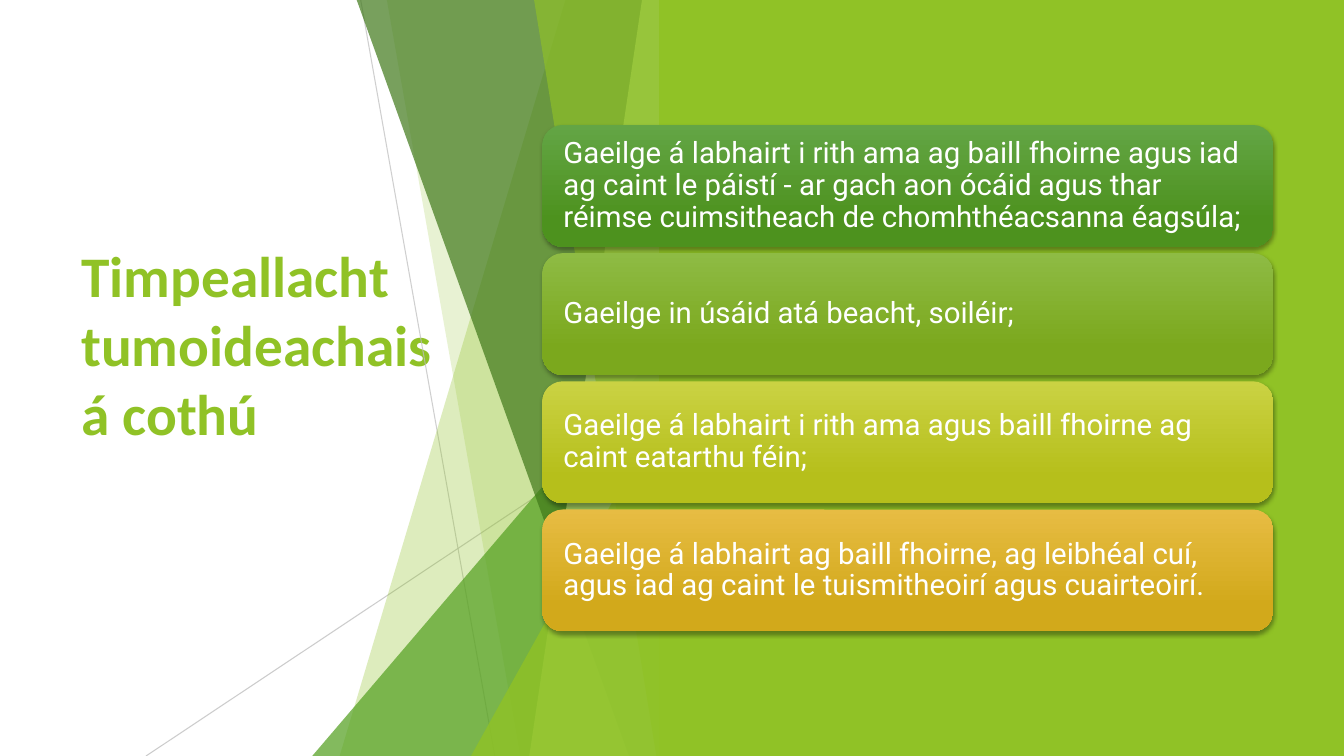
from lxml import etree
from pptx import Presentation
from pptx.dml.color import RGBColor
from pptx.enum.shapes import MSO_CONNECTOR, MSO_SHAPE
from pptx.enum.text import MSO_ANCHOR, PP_ALIGN
from pptx.oxml.ns import qn
from pptx.util import Cm, Pt

STRAIGHT = MSO_CONNECTOR.STRAIGHT
RECTANGLE = MSO_SHAPE.RECTANGLE
ROUNDED = MSO_SHAPE.ROUNDED_RECTANGLE
TRIANGLE = MSO_SHAPE.ISOSCELES_TRIANGLE
MIDDLE = MSO_ANCHOR.MIDDLE
LEFT = PP_ALIGN.LEFT

COLORS = {
    "white": "FFFFFF",
    "gray": "BFBFBF",
    "lime": "90C226",
    "green": "54A021",
    "dark": "3F7819",
    "pale": "C0E474",
}
SLIDE_WIDTH, SLIDE_HEIGHT = 33.87, 19.05
FACET_RIGHT = 16.92
CARD_LEFT, CARD_TOP, CARD_WIDTH, CARD_HEIGHT = 13.67, 3.15, 18.42, 3.07
CARD_PITCH = 3.23

TITLE = "Timpeallacht tumoideachais á cothú"
CARDS = [
    ("Gaeilge á labhairt i rith ama ag baill fhoirne agus iad ag caint le páistí "
     "- ar gach aon ócáid agus thar réimse cuimsitheach de chomhthéacsanna éagsúla;",
     "63A545", "4D921E"),
    ("Gaeilge in úsáid atá beacht, soiléir;", "8EBB44", "7BA81D"),
    ("Gaeilge á labhairt i rith ama agus baill fhoirne ag caint eatarthu féin;",
     "CAD243", "B6BF1B"),
    ("Gaeilge á labhairt ag baill fhoirne, ag leibhéal cuí, agus iad ag caint "
     "le tuismitheoirí agus cuairteoirí.", "E7BC43", "D2A91B"),
]


def rgb(name):
    return RGBColor.from_string(COLORS[name])


def set_opacity(element, percent):
    color = next(element.iter(qn("a:srgbClr")))
    etree.SubElement(color, qn("a:alpha"), val=str(percent * 1000))


def paint(shape, color, opacity=100):
    shape.shadow.inherit = False
    shape.fill.solid()
    shape.fill.fore_color.rgb = rgb(color)
    shape.line.fill.background()
    if opacity < 100:
        set_opacity(shape.fill._xPr, opacity)


def add_facet(slide, top_x, bottom_x, color, opacity):
    builder = slide.shapes.build_freeform(Cm(top_x), 0)
    builder.add_line_segments([
        (Cm(FACET_RIGHT), 0),
        (Cm(FACET_RIGHT), Cm(SLIDE_HEIGHT)),
        (Cm(bottom_x), Cm(SLIDE_HEIGHT)),
    ], close=True)
    paint(builder.convert_to_shape(), color, opacity)


def add_corner(slide, left, top, color, opacity):
    shape = slide.shapes.add_shape(
        TRIANGLE, Cm(left), Cm(top), Cm(FACET_RIGHT - left), Cm(SLIDE_HEIGHT - top))
    shape.adjustments[0] = 1
    paint(shape, color, opacity)


def add_thin_line(slide, start, end, opacity):
    line = slide.shapes.add_connector(STRAIGHT, *map(Cm, start + end))
    line.line.color.rgb = rgb("gray")
    line.line.width = Pt(0.75)
    properties = line._element.spPr
    set_opacity(properties, opacity)
    etree.SubElement(properties, qn("a:effectLst"))


def write_text(shape, text, *, font, size, color, bold=False, inset=(0.25, 0.13),
               line_spacing=1.0):
    frame = shape.text_frame
    frame.word_wrap = True
    frame.vertical_anchor = MIDDLE
    frame.margin_left = frame.margin_right = Cm(inset[0])
    frame.margin_top = frame.margin_bottom = Cm(inset[1])
    paragraph = frame.paragraphs[0]
    paragraph.alignment = LEFT
    paragraph.line_spacing = line_spacing
    run = paragraph.add_run()
    run.text = text
    run.font.name = font
    run.font.size = Pt(size)
    run.font.bold = bold
    run.font.color.rgb = rgb(color)


def add_drop_shadow(shape):
    shape.shadow.inherit = False
    effects = shape._element.spPr.find(qn("a:effectLst"))
    shadow = etree.SubElement(
        effects, qn("a:outerShdw"), blurRad=str(Pt(3)), dist=str(Pt(2)),
        dir="5400000", rotWithShape="0")
    color = etree.SubElement(shadow, qn("a:srgbClr"), val="000000")
    etree.SubElement(color, qn("a:alpha"), val="35000")


def add_card(slide, index, text, light, deep):
    shape = slide.shapes.add_shape(
        ROUNDED, Cm(CARD_LEFT), Cm(CARD_TOP + index * CARD_PITCH),
        Cm(CARD_WIDTH), Cm(CARD_HEIGHT))
    shape.line.fill.background()
    shape.fill.gradient()
    shape.fill.gradient_angle = 270
    for stop, position, color in zip(shape.fill.gradient_stops, (0, 0.78), (light, deep)):
        stop.position = position
        stop.color.rgb = RGBColor.from_string(color)
    add_drop_shadow(shape)
    write_text(shape, text, font="Roboto", size=21, color="white",
               inset=(0.38, 0.38), line_spacing=0.9)


def add_title(slide):
    box = slide.shapes.add_textbox(Cm(1.8), Cm(2.97), Cm(9.86), Cm(11.38))
    write_text(box, TITLE, font="Calibri", size=41, color="lime", bold=True)


def add_facets(slide):
    add_thin_line(slide, (9.09, 0), (12.47, SLIDE_HEIGHT), 75)
    add_thin_line(slide, (FACET_RIGHT, 10.24), (3.68, SLIDE_HEIGHT), 80)
    add_facet(slide, 14.25, 8.56, "lime", 30)
    add_facet(slide, 9.75, 13.11, "lime", 20)
    add_corner(slide, 7.87, 8.46, "green", 72)
    add_facet(slide, 8.99, 15.85, "dark", 70)
    add_facet(slide, 16.18, 13.34, "pale", 70)
    add_facet(slide, 13.46, 16.54, "lime", 65)
    add_corner(slide, 11.87, 9.98, "lime", 80)


def add_panel(slide):
    left = 16.61
    panel = slide.shapes.add_shape(
        RECTANGLE, Cm(left), 0, Cm(SLIDE_WIDTH - left), Cm(SLIDE_HEIGHT))
    paint(panel, "lime")


def main():
    presentation = Presentation()
    presentation.slide_width = Cm(SLIDE_WIDTH)
    presentation.slide_height = Cm(SLIDE_HEIGHT)
    slide = presentation.slides.add_slide(presentation.slide_layouts[6])
    slide.background.fill.solid()
    slide.background.fill.fore_color.rgb = rgb("white")
    add_title(slide)
    add_facets(slide)
    add_panel(slide)
    for index, card in enumerate(CARDS):
        add_card(slide, index, *card)
    presentation.save("out.pptx")


if __name__ == "__main__":
    main()
